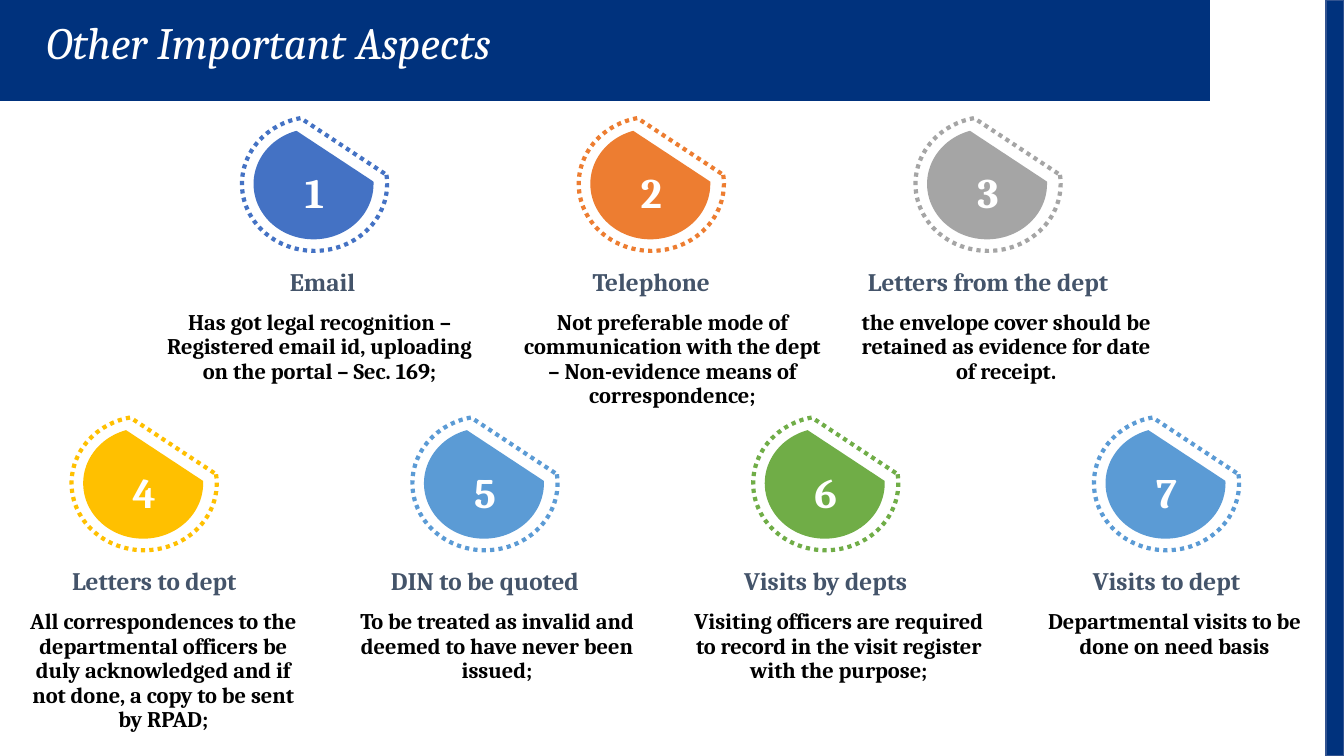
from pptx import Presentation
from pptx.dml.color import RGBColor
from pptx.enum.dml import MSO_LINE
from pptx.enum.shapes import MSO_SHAPE as Shape
from pptx.enum.text import MSO_ANCHOR as Anchor, PP_ALIGN as Align
from pptx.util import Inches, Pt

WIDTH, HEIGHT = 13.33, 7.5
NAVY, SLATE, WHITE, BLACK = "00327D", "44546A", "FFFFFF", "000000"
BADGE_WIDTH, BADGE_HEIGHT = 1.44, 1.33

# heading, text, colour, heading shift, text shift, text width
TOP_ROW = [
    ("Email", "Has got legal recognition – Registered email id, uploading on the portal – Sec. 169;",
     "4472C4", 0.08, 0.05, 3.17),
    ("Telephone", "Not preferable mode of communication with the dept – Non-evidence means of "
     "correspondence;", "ED7D31", 0, 0.21, 3.1),
    ("Letters from the dept", "the envelope cover should be retained as evidence for date of receipt.",
     "A5A5A5", 0, 0.18, 3.1),
]
BOTTOM_ROW = [
    ("Letters to dept", "All correspondences to the departmental officers be duly acknowledged and "
     "if not done, a copy to be sent by RPAD;", "FFC000", 0.1, 0.19, 2.84),
    ("DIN to be quoted", "To be treated as invalid and deemed to have never been issued;",
     "5B9BD5", 0, 0.12, 2.95),
    ("Visits by depts", "Visiting officers are required to record in the visit register with the "
     "purpose;", "70AD47", 0, 0.13, 3.1),
    ("Visits to dept", "Departmental visits to be done on need basis",
     "5B9BD5", 0, 0.08, 2.61),
]


def colour(value):
    return RGBColor.from_string(value)


def inches(*lengths):
    return [Inches(length) for length in lengths]


def paint(shape, fill=None, line=None, line_width=1, dash=None):
    shape.shadow.inherit = False
    if fill:
        shape.fill.solid()
        shape.fill.fore_color.rgb = colour(fill)
    else:
        shape.fill.background()
    if line:
        shape.line.color.rgb = colour(line)
        shape.line.width = Pt(line_width)
        shape.line.dash_style = dash
    else:
        shape.line.fill.background()


def write(shape, text, ink, frame_format, paragraph_format, font_format):
    frame = shape.text_frame
    frame.text = text
    paragraph = frame.paragraphs[0]
    font = paragraph.runs[0].font
    font.name = "Cambria"
    font.color.rgb = colour(ink)
    for target, values in ((frame, frame_format), (paragraph, paragraph_format), (font, font_format)):
        for name, value in values.items():
            setattr(target, name, value)


def add_centred_text(slide, text, centre, top, width, height, ink, size, frame_format, **spacing):
    box = slide.shapes.add_textbox(*inches(centre - width / 2, top, width, height))
    write(box, text, ink, frame_format, {"alignment": Align.CENTER, **spacing},
          {"size": Pt(size), "bold": True})


def add_chord(slide, centre, middle, width, height, angles, **style):
    chord = slide.shapes.add_shape(
        Shape.CHORD, *inches(centre - width / 2, middle - height / 2, width, height))
    for index, angle in enumerate(angles):
        chord.adjustments[index] = angle
    paint(chord, **style)


def add_banner(slide):
    builder = slide.shapes.build_freeform(0, 0, scale=Inches(1))
    builder.add_line_segments([(0, 1.05), (11.75, 1.05), (12.07, 0)], close=True)
    paint(builder.convert_to_shape(), fill=NAVY)
    side_bar = slide.shapes.add_shape(Shape.RECTANGLE, *inches(WIDTH - 0.18, 0, 0.18, HEIGHT))
    paint(side_bar, fill=NAVY, line="325491")


def add_title(slide, text):
    title = slide.shapes.title
    title.left, title.top, title.width, title.height = inches(0.36, 0.16, 11.27, 0.64)
    write(title, text, WHITE, {"vertical_anchor": Anchor.TOP, "word_wrap": True},
          {"alignment": Align.LEFT, "line_spacing": 0.9}, {"size": Pt(32), "italic": True})
    tree = slide.shapes._spTree
    tree.append(title._element)


def add_aspect(slide, number, aspect, left, top):
    heading, text, accent, heading_shift, text_shift, text_width = aspect
    centre, middle = left + BADGE_WIDTH / 2, top + BADGE_HEIGHT / 2
    add_chord(slide, centre - 0.01, middle, 1.19, 1.1, (214.67, 151.29), fill=accent)
    add_chord(slide, centre, middle, BADGE_WIDTH, BADGE_HEIGHT, (211.71, 154.85),
              line=accent, line_width=3, dash=MSO_LINE.ROUND_DOT)
    add_centred_text(slide, str(number), centre, top + 0.44, 0.49, 0.61, WHITE, 30,
                     {"vertical_anchor": Anchor.MIDDLE, "word_wrap": False})
    add_centred_text(slide, heading, centre + heading_shift, top + 1.43, 2.8, 0.4, SLATE, 18,
                     {"vertical_anchor": Anchor.BOTTOM, "word_wrap": False})
    margins = dict(zip(("margin_left", "margin_top", "margin_right", "margin_bottom"),
                       inches(0.05, 0.03, 0.05, 0.03)))
    add_centred_text(slide, text, centre + text_shift, top + 1.89, text_width, 1.06, BLACK, 16,
                     {"word_wrap": True, **margins}, line_spacing=Pt(17.5))


def add_row(slide, aspects, first_number, left, top, step):
    for column, aspect in enumerate(aspects):
        add_aspect(slide, first_number + column, aspect, left + column * step, top)


def main():
    presentation = Presentation()
    presentation.slide_width, presentation.slide_height = inches(WIDTH, HEIGHT)
    slide = presentation.slides.add_slide(presentation.slide_layouts.get_by_name("Title Only"))
    add_banner(slide)
    add_row(slide, TOP_ROW, 1, left=2.4, top=1.16, step=3.34)
    add_row(slide, BOTTOM_ROW, len(TOP_ROW) + 1, left=0.71, top=4.13, step=3.38)
    add_title(slide, "Other Important Aspects")
    presentation.save("out.pptx")


if __name__ == "__main__":
    main()
